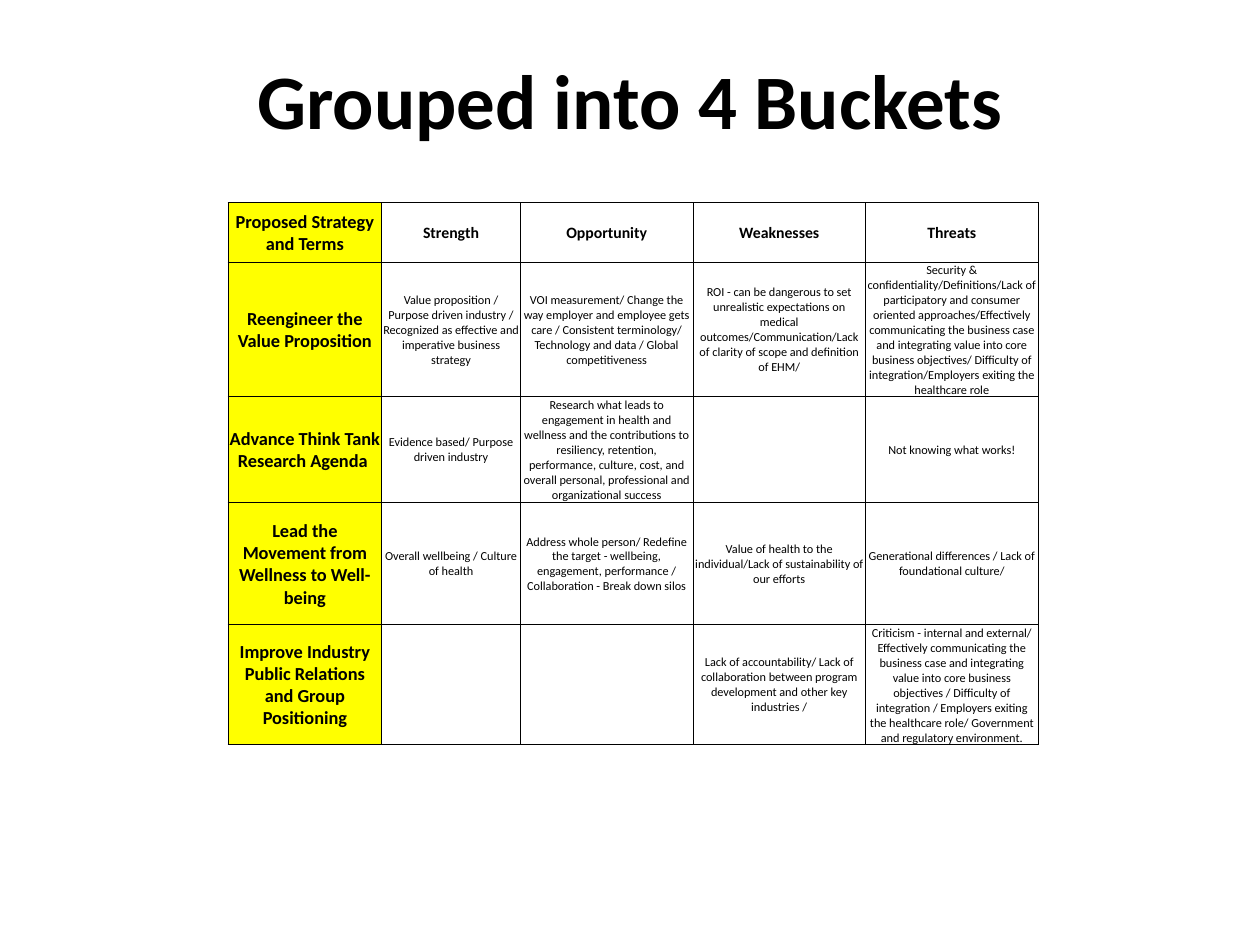
from dataclasses import dataclass

from lxml import etree
from pptx import Presentation
from pptx.dml.color import RGBColor
from pptx.enum.text import MSO_ANCHOR, PP_ALIGN
from pptx.oxml.ns import qn
from pptx.util import Inches, Pt

CENTER = PP_ALIGN.CENTER
MIDDLE = MSO_ANCHOR.MIDDLE

TITLE = "Grouped into 4 Buckets"
HEADERS = ["Proposed Strategy and Terms", "Strength", "Opportunity", "Weaknesses", "Threats"]
STRATEGIES = [
    ["Reengineer the Value Proposition",
     "Value proposition / Purpose driven industry / Recognized as effective and "
     "imperative business strategy",
     "VOI measurement/ Change the way employer and employee gets care / Consistent "
     "terminology/ Technology and data / Global competitiveness",
     "ROI - can be dangerous to set unrealistic expectations on medical "
     "outcomes/Communication/Lack of clarity of scope and definition of EHM/",
     "Security & confidentiality/Definitions/Lack of participatory and consumer oriented "
     "approaches/Effectively communicating the business case and integrating value into "
     "core business objectives/ Difficulty of integration/Employers exiting the "
     "healthcare role"],
    ["Advance Think Tank Research Agenda ",
     "Evidence based/ Purpose driven industry",
     "Research what leads to engagement in health and wellness and the contributions to "
     "resiliency, retention, performance, culture, cost, and overall personal, "
     "professional and organizational success",
     "",
     "Not knowing what works!"],
    ["Lead the Movement from Wellness to Well-being",
     "Overall wellbeing / Culture of health",
     "Address whole person/ Redefine the target - wellbeing, engagement, performance / "
     "Collaboration - Break down silos",
     "Value of health to the individual/Lack of sustainability of our efforts",
     "Generational differences / Lack of foundational culture/"],
    ["Improve Industry Public Relations and Group Positioning",
     "",
     "",
     "Lack of accountability/ Lack of collaboration between program development and other "
     "key industries /",
     "Criticism - internal and external/ Effectively communicating the business case and "
     "integrating value into core business objectives / Difficulty of integration / "
     "Employers exiting the healthcare role/ Government and regulatory environment."],
]
COLUMN_WIDTHS = [1.22, 1.1, 1.37, 1.37, 1.37]
ROW_HEIGHTS = [0.47, 1.07, 0.84, 0.97, 0.95]
TABLE_LEFT, TABLE_TOP = 1.81, 1.61


@dataclass(frozen=True)
class Theme:
    font: str = "Calibri"
    ink: str = "000000"
    strategy_fill: str = "FFFF00"
    title_size: float = 44
    strategy_size: float = 10.5
    header_size: float = 9
    body_size: float = 7
    border_width: float = 0.5


THEME = Theme()


def write(para, text, size, bold):
    para.alignment = CENTER
    span = para.add_run()
    span.text = text
    span.font.name = THEME.font
    span.font.size = Pt(size)
    span.font.bold = bold
    span.font.color.rgb = RGBColor.from_string(THEME.ink)


def add_borders(cell):
    """Outline all four sides; call before filling, as borders come first in the XML."""
    properties = cell._tc.get_or_add_tcPr()
    for side in ("a:lnL", "a:lnR", "a:lnT", "a:lnB"):
        line = etree.SubElement(properties, qn(side), w=str(Pt(THEME.border_width)))
        fill = etree.SubElement(line, qn("a:solidFill"))
        etree.SubElement(fill, qn("a:srgbClr"), val=THEME.ink)


def format_cell(cell, is_strategy):
    cell.vertical_anchor = MIDDLE
    cell.margin_left = cell.margin_right = cell.margin_top = Inches(0.01)
    cell.margin_bottom = 0
    add_borders(cell)
    if is_strategy:
        cell.fill.solid()
        cell.fill.fore_color.rgb = RGBColor.from_string(THEME.strategy_fill)
    else:
        cell.fill.background()


def text_style(row, column):
    """Return the type size and weight for a table position."""
    if column == 0:
        return THEME.strategy_size, True
    if row == 0:
        return THEME.header_size, True
    return THEME.body_size, False


def add_title(page):
    box = page.shapes.add_textbox(Inches(0), Inches(0.3), Inches(10), Inches(0.96))
    frame = box.text_frame
    frame.word_wrap = True
    frame.vertical_anchor = MIDDLE
    write(frame.paragraphs[0], TITLE, THEME.title_size, True)


def add_strategy_table(page):
    rows = [HEADERS] + STRATEGIES
    table = page.shapes.add_table(
        len(rows), len(HEADERS), Inches(TABLE_LEFT), Inches(TABLE_TOP),
        Inches(sum(COLUMN_WIDTHS)), Inches(sum(ROW_HEIGHTS))).table
    table.first_row = table.horz_banding = False
    for column, width in zip(table.columns, COLUMN_WIDTHS):
        column.width = Inches(width)
    for row, height in zip(table.rows, ROW_HEIGHTS):
        row.height = Inches(height)
    for r, texts in enumerate(rows):
        for c, text in enumerate(texts):
            cell = table.cell(r, c)
            format_cell(cell, c == 0)
            if text:
                write(cell.text_frame.paragraphs[0], text, *text_style(r, c))


def main():
    deck = Presentation()
    deck.slide_width, deck.slide_height = Inches(10), Inches(7.5)
    page = deck.slides.add_slide(deck.slide_layouts[6])
    add_title(page)
    add_strategy_table(page)
    deck.save("out.pptx")


if __name__ == "__main__":
    main()
